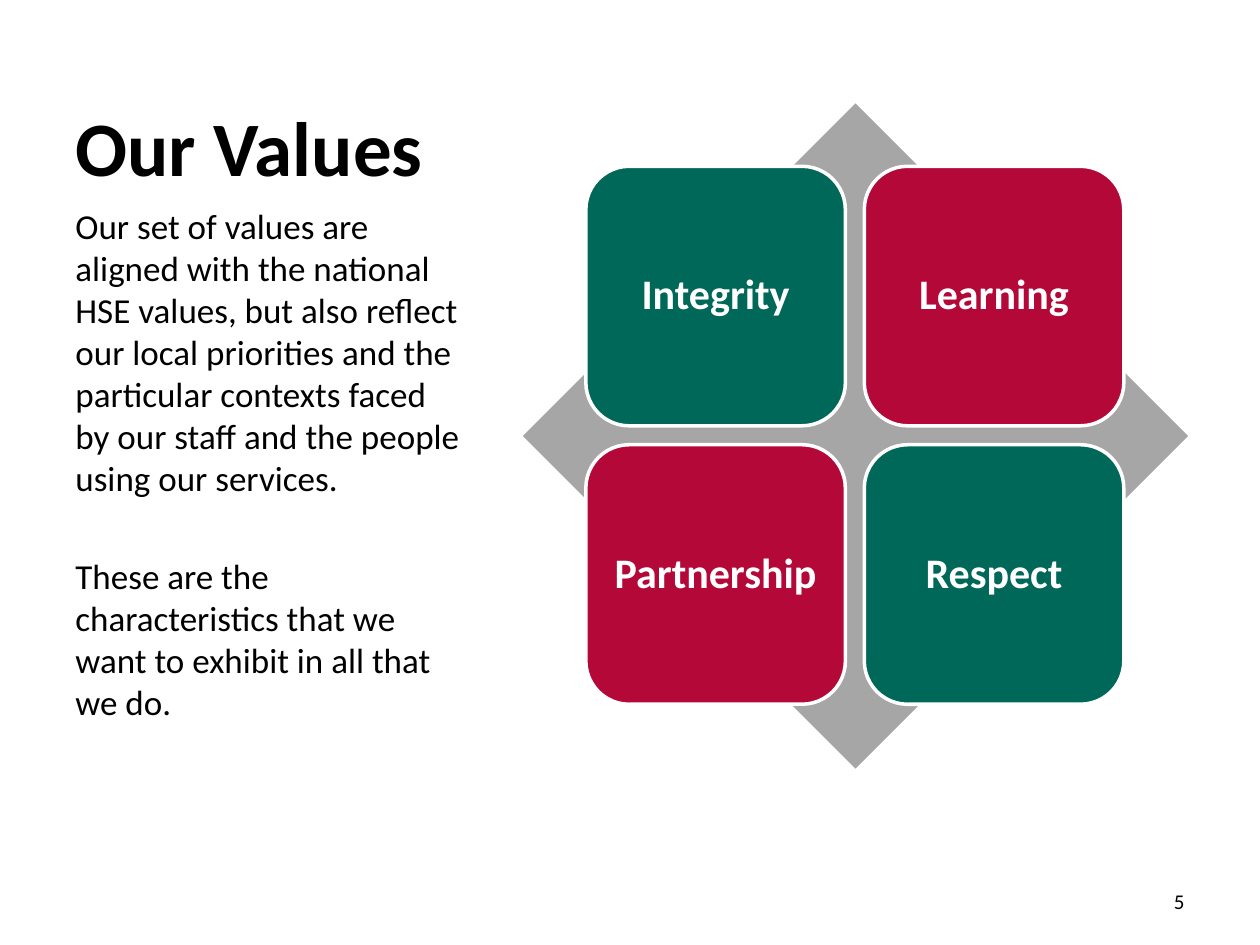
from pptx import Presentation
from pptx.dml.color import RGBColor
from pptx.enum.shapes import MSO_SHAPE as Shape
from pptx.enum.text import MSO_ANCHOR as Anchor, MSO_AUTO_SIZE as AutoSize, PP_ALIGN as Align
from pptx.util import Inches, Pt


def paint(color_format, hex_color):
    color_format.rgb = RGBColor.from_string(hex_color)


def write(frame, *texts, size=20, color="000000", bold=False, align=Align.LEFT,
          anchor=Anchor.TOP, gap=0, spacing=None, inset=0.1):
    frame.word_wrap = True
    frame.auto_size = AutoSize.NONE
    frame.vertical_anchor = anchor
    frame.margin_left = frame.margin_right = Inches(inset)
    for i, text in enumerate(texts):
        para = frame.paragraphs[0] if i == 0 else frame.add_paragraph()
        para.text = text
        para.alignment = align
        para.line_spacing = spacing
        para.space_before = Pt(gap if i else 0)
        para.font.name = "Calibri"
        para.font.size = Pt(size)
        para.font.bold = bold
        paint(para.font.color, color)


prs = Presentation()
prs.slide_width, prs.slide_height = Inches(10), Inches(7.5)
slide = prs.slides.add_slide(prs.slide_layouts[5])
shapes = slide.shapes

title = shapes.title
title.left, title.top = Inches(0.5), Inches(0.3)
title.width, title.height = Inches(3.29), Inches(1.27)
write(title.text_frame, "Our Values", size=44, bold=True, anchor=Anchor.BOTTOM)

intro = shapes.add_textbox(Inches(0.5), Inches(1.57), Inches(3.29), Inches(5.13))
write(intro.text_frame,
      "Our set of values are aligned with the national HSE values, but also reflect our local "
      "priorities and the particular contexts faced by our staff and the people using our services.",
      "These are the characteristics that we want to exhibit in all that we do.",
      gap=32)

page_number = shapes.add_textbox(Inches(7.17), Inches(6.95), Inches(2.33), Inches(0.4))
write(page_number.text_frame, "5", size=12, align=Align.RIGHT, anchor=Anchor.MIDDLE)

diamond = shapes.add_shape(Shape.DIAMOND, Inches(4.15), Inches(0.82), Inches(5.28), Inches(5.28))
diamond.shadow.inherit = False
diamond.fill.solid()
paint(diamond.fill.fore_color, "A6A6A6")
diamond.line.fill.background()

GREEN, RED = "006858", "B30838"
values = [("Integrity", GREEN), ("Learning", RED), ("Partnership", RED), ("Respect", GREEN)]
tile_size, tile_step = 2.06, 2.21
for i, (value, color) in enumerate(values):
    row, col = divmod(i, 2)
    tile = shapes.add_shape(Shape.ROUNDED_RECTANGLE,
                            Inches(4.65 + col * tile_step), Inches(1.32 + row * tile_step),
                            Inches(tile_size), Inches(tile_size))
    tile.shadow.inherit = False
    tile.fill.solid()
    paint(tile.fill.fore_color, color)
    paint(tile.line.color, "FFFFFF")
    tile.line.width = Pt(2)
    write(tile.text_frame, value, size=24, color="FFFFFF", bold=True,
          align=Align.CENTER, anchor=Anchor.MIDDLE, spacing=0.9)

prs.save("out.pptx")
